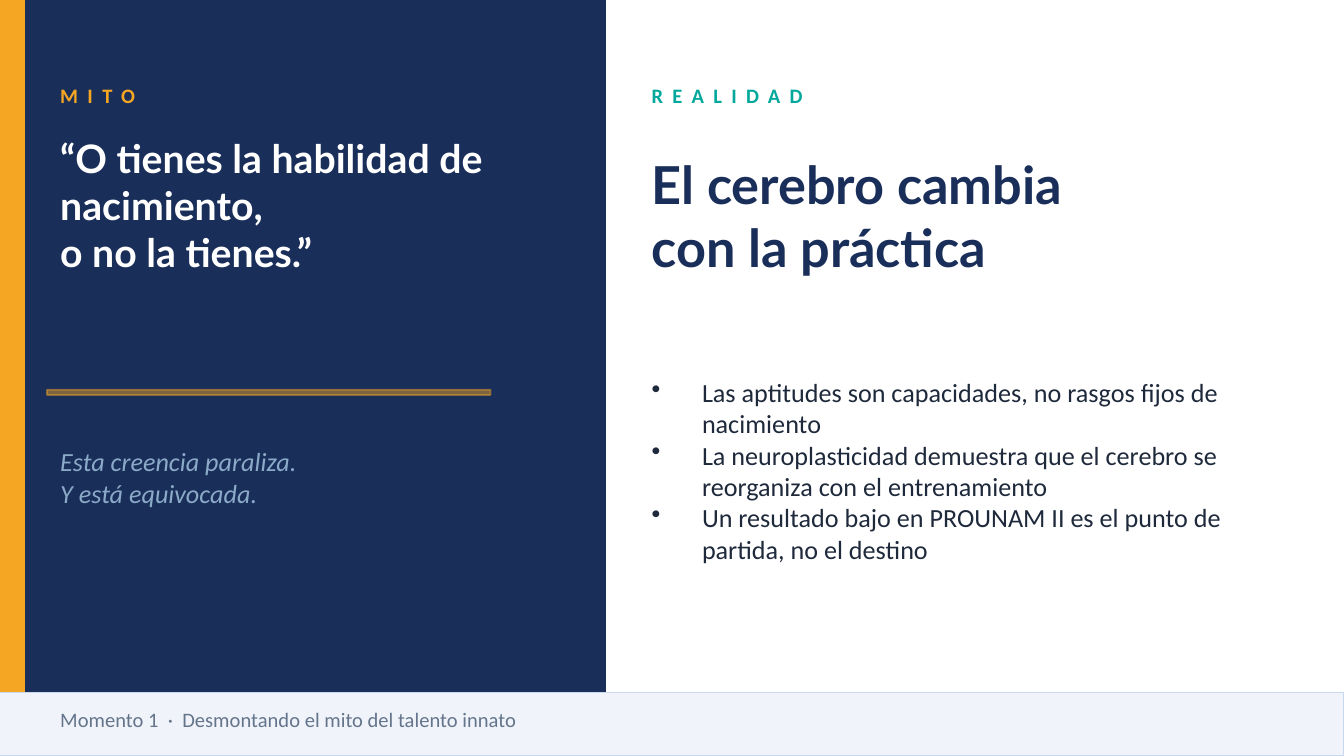
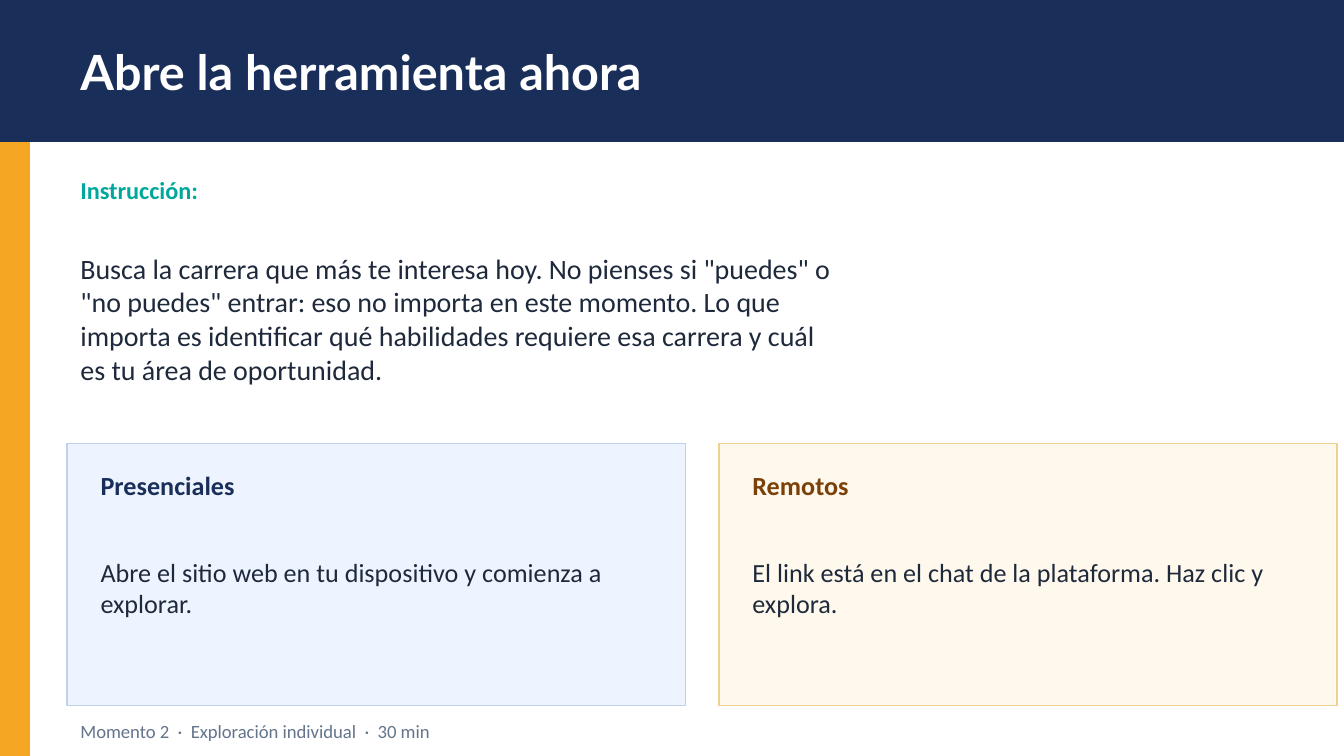
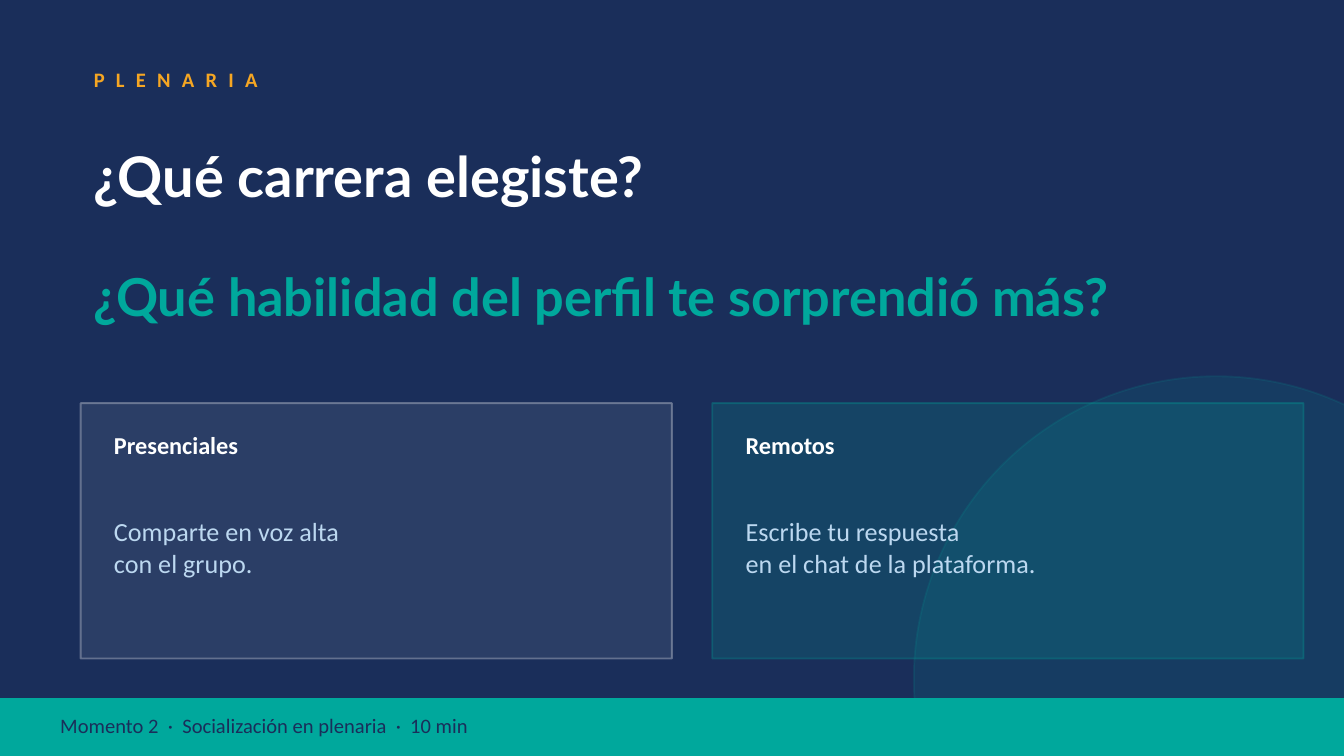
import pptx
import pptx.dml.color
import pptx.enum.shapes
import pptx.enum.text
import pptx.oxml.ns
import pptx.util
import lxml.etree

EMU_PER_PX = 4572  # 200 px to the inch
SLIDE_W, SLIDE_H = 2000, 1125
MARGIN = 70
LABEL_H = 84
COLORS = {
    "navy": "1A2E5A", "amber": "F5A623", "teal": "00A89C", "white": "FFFFFF",
    "ink": "1E293B", "slate": "64748B", "mist": "8BAAC8", "sky": "BCD8F0",
    "brown": "7A4008", "footer": "F0F4FA", "footer edge": "C8D8EE",
    "blue card": "EEF4FF", "blue edge": "BED0EC",
    "cream card": "FFF8EC", "cream edge": "F0D090",
}
HEADING = {"name": "Lato", "bold": True}
LABEL = {"name": "Calibri", "bold": True}
BODY = {"name": "Calibri"}
RECT = pptx.enum.shapes.MSO_SHAPE.RECTANGLE
OVAL = pptx.enum.shapes.MSO_SHAPE.OVAL
MIDDLE = pptx.enum.text.MSO_ANCHOR.MIDDLE
TOP = pptx.enum.text.MSO_ANCHOR.TOP
qn = pptx.oxml.ns.qn


def add_block(slide, place, fill, edge=None, width=1, alphas=(100, 100), kind=RECT):
    """Filled shape; alphas are the opacity in percent of fill and line."""
    block = slide.shapes.add_shape(kind, *[v * EMU_PER_PX for v in place])
    block.shadow.inherit = False
    block.line.width = pptx.util.Pt(width)
    block.fill.solid()
    parts = ((block.fill, fill), (block.line.fill, edge or fill))
    for (paint, color), alpha in zip(parts, alphas):
        paint.solid()
        paint.fore_color.rgb = pptx.dml.color.RGBColor.from_string(COLORS[color])
        if alpha < 100:
            holder = block.line._ln if paint is not block.fill else block._element.spPr
            tint = holder.find(qn("a:solidFill"))[0]
            lxml.etree.SubElement(tint, qn("a:alpha")).set("val", str(alpha * 1000))


def add_text(slide, place, lines, style, size, color, spacing=0, bullet_indent=0, anchor=MIDDLE):
    """Text box with one paragraph for each line."""
    frame = slide.shapes.add_textbox(*[v * EMU_PER_PX for v in place]).text_frame
    frame.word_wrap = True
    frame.vertical_anchor = anchor
    for number, line in enumerate(lines):
        paragraph = frame.add_paragraph() if number else frame.paragraphs[0]
        if bullet_indent:
            props = paragraph._p.get_or_add_pPr()
            props.set("marL", str(bullet_indent * EMU_PER_PX))
            props.set("indent", str(-bullet_indent * EMU_PER_PX))
            lxml.etree.SubElement(props, qn("a:buChar")).set("char", "•")
        run = paragraph.add_run()
        run.text = line
        for attribute, value in {**style, "size": pptx.util.Pt(size)}.items():
            setattr(run.font, attribute, value)
        run.font.color.rgb = pptx.dml.color.RGBColor.from_string(COLORS[color])
        if spacing:
            run._r.get_or_add_rPr().set("spc", str(spacing * 100))


deck = pptx.Presentation()
deck.slide_width = SLIDE_W * EMU_PER_PX
deck.slide_height = SLIDE_H * EMU_PER_PX
myth, tool, plenary = [deck.slides.add_slide(deck.slide_layouts[6]) for _ in range(3)]
for slide, backdrop in ((myth, "white"), (tool, "white"), (plenary, "navy")):
    slide.background.fill.solid()
    slide.background.fill.fore_color.rgb = pptx.dml.color.RGBColor.from_string(COLORS[backdrop])

# Slide 1: myth on the left
add_block(myth, (0, 0, 900, SLIDE_H), "navy")
add_block(myth, (0, 0, 36, SLIDE_H), "amber")
add_text(myth, (MARGIN, 100, 780, LABEL_H), ["MITO"], LABEL, 11, "amber", spacing=5)
add_text(myth, (MARGIN, 190, 780, 380),
         ["“O tienes la habilidad de nacimiento,", "o no la tienes.”"],
         HEADING, 21, "white", anchor=TOP)
add_block(myth, (MARGIN, 580, 660, 8), "amber", alphas=(45, 45))
add_text(myth, (MARGIN, 610, 780, 200), ["Esta creencia paraliza.", "Y está equivocada."],
         {**BODY, "italic": True}, 14, "mist")

# Slide 1: reality on the right
add_text(myth, (950, 100, 1000, LABEL_H), ["REALIDAD"], LABEL, 11, "teal", spacing=5)
add_text(myth, (950, 190, 1000, 260), ["El cerebro cambia", "con la práctica"],
         HEADING, 28, "navy")
add_text(myth, (950, 480, 1000, 440), [
    "Las aptitudes son capacidades, no rasgos fijos de nacimiento",
    "La neuroplasticidad demuestra que el cerebro se reorganiza con el entrenamiento",
    "Un resultado bajo en PROUNAM II es el punto de partida, no el destino",
], BODY, 14, "ink", bullet_indent=75)

# Slide 2: title band and instruction
add_block(tool, (0, 0, 44, SLIDE_H), "amber")
add_block(tool, (0, 0, SLIDE_W, 210), "navy")
add_text(tool, (100, 0, 1840, 210), ["Abre la herramienta ahora"], HEADING, 26, "white")
add_text(tool, (100, 240, 440, LABEL_H), ["Instrucción:"], LABEL, 13, "teal")
add_text(tool, (100, 324, 1160, 300), [
    'Busca la carrera que más te interesa hoy. No pienses si "puedes" o "no puedes" entrar: '
    "eso no importa en este momento. Lo que importa es identificar qué habilidades requiere "
    "esa carrera y cuál es tu área de oportunidad."
], BODY, 15, "ink")

# Slide 3: questions over the circle
add_block(plenary, (1360, 560, 900, 900), "teal", alphas=(12, 12), kind=OVAL)
add_text(plenary, (120, 76, 1000, LABEL_H), ["PLENARIA"], LABEL, 11, "amber", spacing=6)
questions = (("¿Qué carrera elegiste?", 30, "white"),
             ("¿Qué habilidad del perfil te sorprendió más?", 28, "teal"))
for row, (question, size, color) in enumerate(questions):
    add_text(plenary, (120, 170 + row * 180, 1640, 180), [question], HEADING, size, color)

# Cards for those in the room and those online, slides 2 and 3
card_pairs = (
    (tool, (100, 660, 920, 390), 50, 860, 14, "ink", (
        ("Presenciales", "navy", ["Abre el sitio web en tu dispositivo y comienza a explorar."],
         ("blue card", "blue edge", 0.75)),
        ("Remotos", "brown", ["El link está en el chat de la plataforma. Haz clic y explora."],
         ("cream card", "cream edge", 0.75)),
    )),
    (plenary, (120, 600, 880, 380), 60, 800, 13, "sky", (
        ("Presenciales", "white", ["Comparte en voz alta", "con el grupo."],
         ("white", "white", 1, (8, 30))),
        ("Remotos", "white", ["Escribe tu respuesta", "en el chat de la plataforma."],
         ("teal", "teal", 1, (18, 30))),
    )),
)
for slide, (left, top, width, height), gap, text_w, heading_size, body_color, cards in card_pairs:
    for column, (audience, heading_color, task, look) in enumerate(cards):
        x = left + column * (width + gap)
        add_block(slide, (x, top, width, height), *look)
        add_text(slide, (x + 30, top + 20, text_w, LABEL_H), [audience],
                 LABEL, heading_size, heading_color)
        add_text(slide, (x + 30, top + 20 + LABEL_H, text_w, 220), task, BODY, 14, body_color)

# Footers
add_block(myth, (0, 1030, SLIDE_W, 95), "footer", "footer edge", 0.5)
add_block(plenary, (0, 1040, SLIDE_W, 85), "teal")
footers = (
    (myth, (MARGIN, 1036, 1600, 70), "Momento 1  ·  Desmontando el mito del talento innato", 11, "slate"),
    (tool, (100, 1060, 1200, 56), "Momento 2  ·  Exploración individual  ·  30 min", 10, "slate"),
    (plenary, (MARGIN, 1044, 1400, 70), "Momento 2  ·  Socialización en plenaria  ·  10 min", 11, "navy"),
)
for slide, place, moment, size, color in footers:
    add_text(slide, place, [moment], BODY, size, color)

deck.save("out.pptx")
